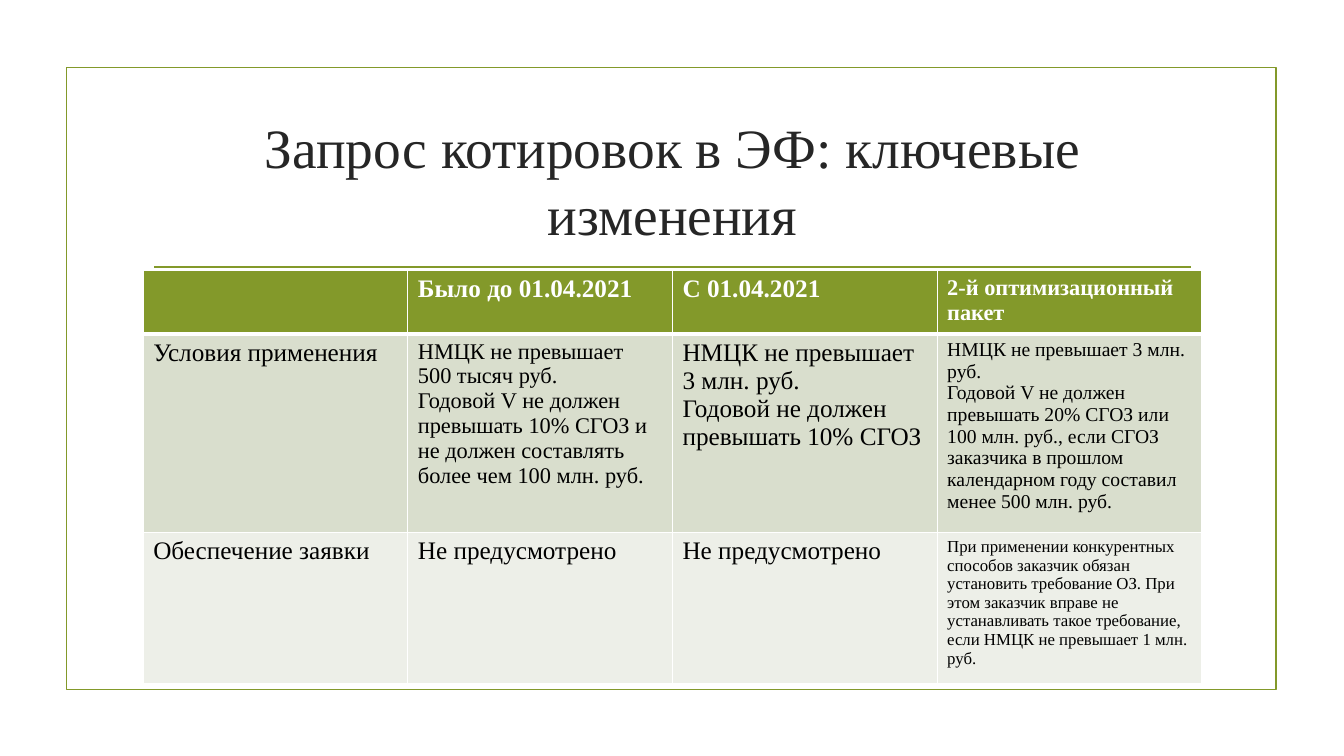
from dataclasses import dataclass

from lxml.etree import SubElement
from pptx import Presentation
from pptx.dml.color import RGBColor
from pptx.enum.shapes import MSO_CONNECTOR, MSO_SHAPE
from pptx.enum.text import MSO_ANCHOR, PP_ALIGN
from pptx.oxml.ns import qn
from pptx.util import Inches, Pt

FONT = "Times New Roman"
GREEN = "83992A"
WHITE = "FFFFFF"
BLACK = "000000"
TITLE_COLOR = "262626"
COLUMN_WIDTH = 2.625


@dataclass
class Entry:
    text: str
    size: int = 18


@dataclass
class Row:
    height: float
    fill: str
    entries: list[Entry]
    color: str = BLACK
    bold: bool = False
    bottom_border: float = 1


ROWS = [
    Row(0.58, GREEN, [
        Entry(""),
        Entry("Было до 01.04.2021"),
        Entry("С 01.04.2021"),
        Entry("2-й оптимизационный пакет", 16),
    ], WHITE, True, 3),
    Row(1.82, "D9DECD", [
        Entry("Условия применения"),
        Entry("НМЦК не превышает 500 тысяч руб.\n"
              "Годовой V не должен превышать 10% СГОЗ и не должен "
              "составлять более чем 100 млн. руб.", 16),
        Entry("НМЦК не превышает 3 млн. руб.\n"
              "Годовой не должен превышать 10% СГОЗ"),
        Entry("НМЦК не превышает 3 млн. руб.\n"
              "Годовой V не должен превышать 20% СГОЗ или 100 млн. руб., "
              "если СГОЗ заказчика в прошлом календарном году составил "
              "менее 500 млн. руб.", 14),
    ]),
    Row(1.4, "EDEFE8", [
        Entry("Обеспечение заявки"),
        Entry("Не предусмотрено"),
        Entry("Не предусмотрено"),
        Entry("При применении конкурентных способов заказчик обязан "
              "установить требование ОЗ. При этом заказчик вправе не "
              "устанавливать такое требование, если НМЦК не превышает "
              "1 млн. руб.", 12),
    ]),
]


def rgb(value: str) -> RGBColor:
    return RGBColor.from_string(value)


def format_text(tf, size: float, color: str, bold: bool = False) -> None:
    for p in tf.paragraphs:
        p.font.size = Pt(size)
        for r in p.runs:
            r.font.name = FONT
            r.font.size = Pt(size)
            r.font.bold = bold
            r.font.color.rgb = rgb(color)


def add_frame(slide) -> None:
    sp = slide.shapes.add_shape(
        MSO_SHAPE.RECTANGLE, Inches(0.66), Inches(0.67), Inches(12), Inches(6.17))
    sp.shadow.inherit = False
    sp.fill.background()
    sp.line.color.rgb = rgb(GREEN)
    sp.line.width = Pt(1.25)


def add_rule(slide) -> None:
    line = slide.shapes.add_connector(
        MSO_CONNECTOR.STRAIGHT, Inches(1.53), Inches(2.65), Inches(11.81), Inches(2.65))
    line.line.color.rgb = rgb(GREEN)
    line.line.width = Pt(1.25)
    SubElement(line._element.spPr, qn("a:effectLst"))


def add_title(slide, text: str) -> None:
    sp = slide.shapes.add_textbox(
        Inches(1.42), Inches(1.07), Inches(10.5), Inches(1.43))
    tf = sp.text_frame
    tf.word_wrap = True
    tf.vertical_anchor = MSO_ANCHOR.MIDDLE
    tf.text = text
    tf.paragraphs[0].alignment = PP_ALIGN.CENTER
    format_text(tf, 39.6, TITLE_COLOR)


def set_borders(cell, top: float, bottom: float) -> None:
    tc_pr = cell._tc.get_or_add_tcPr()
    for side, width in (("L", 1), ("R", 1), ("T", top), ("B", bottom)):
        ln = SubElement(tc_pr, qn(f"a:ln{side}"), w=str(Pt(width)))
        fill = SubElement(ln, qn("a:solidFill"))
        SubElement(fill, qn("a:srgbClr"), val=WHITE)


def add_comparison(slide, rows: list[Row]) -> None:
    columns = len(rows[0].entries)
    table = slide.shapes.add_table(
        len(rows), columns, Inches(1.42), Inches(2.68),
        Inches(COLUMN_WIDTH * columns), Inches(sum(row.height for row in rows))).table
    for column in table.columns:
        column.width = Inches(COLUMN_WIDTH)
    top_border = 1
    for i, row in enumerate(rows):
        table.rows[i].height = Inches(row.height)
        for j, entry in enumerate(row.entries):
            cell = table.cell(i, j)
            set_borders(cell, top_border, row.bottom_border)
            cell.fill.solid()
            cell.fill.fore_color.rgb = rgb(row.fill)
            cell.text_frame.text = entry.text
            format_text(cell.text_frame, entry.size, row.color, row.bold)
        top_border = row.bottom_border


def main() -> None:
    prs = Presentation()
    prs.slide_width = Inches(13.33)
    prs.slide_height = Inches(7.5)
    slide = prs.slides.add_slide(prs.slide_layouts[6])
    add_frame(slide)
    add_rule(slide)
    add_title(slide, "Запрос котировок в ЭФ: ключевые изменения")
    add_comparison(slide, ROWS)
    prs.save("out.pptx")


if __name__ == "__main__":
    main()
